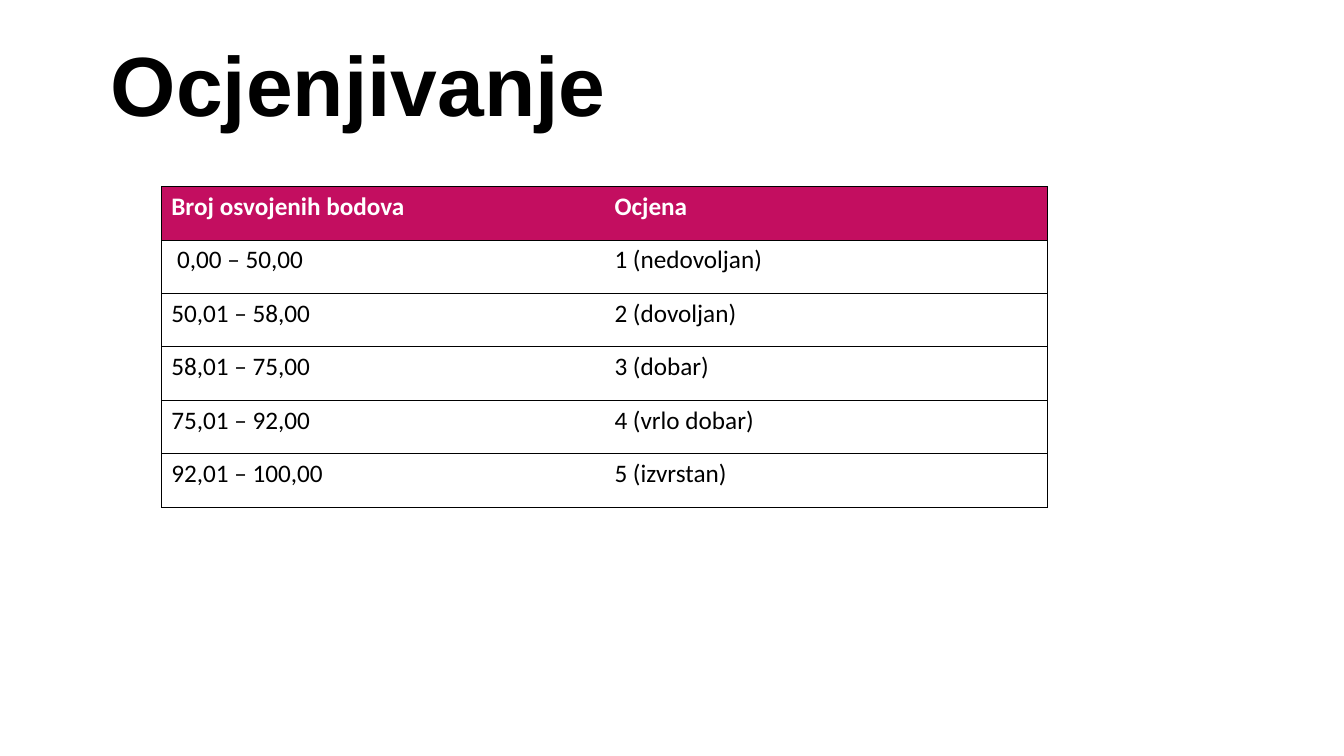
from lxml import etree
from pptx import Presentation
from pptx.dml.color import RGBColor
from pptx.enum.text import MSO_ANCHOR, PP_ALIGN
from pptx.oxml.ns import qn
from pptx.util import Inches, Pt

COLORS = {"text": "000000", "header": "C30E60", "header_text": "FFFFFF", "border": "000000"}
GRADES = [
    ("Broj osvojenih bodova", "Ocjena"),
    (" 0,00 – 50,00", "1 (nedovoljan)"),
    ("50,01 – 58,00", "2 (dovoljan)"),
    ("58,01 – 75,00", "3 (dobar)"),
    ("75,01 – 92,00", "4 (vrlo dobar)"),
    ("92,01 – 100,00", "5 (izvrstan)"),
]


def rgb(name):
    return RGBColor.from_string(COLORS[name])


def format_font(font, name, size, color, bold):
    font.name, font.size, font.bold = name, Pt(size), bold
    font.color.rgb = rgb(color)


def set_borders(cell, visible):
    """Draw the sides named in visible and hide the others."""
    tc_pr = cell._tc.get_or_add_tcPr()
    for i, side in enumerate("LRTB"):
        ln = etree.Element(qn(f"a:ln{side}"), w=str(Pt(0.5)))
        if side in visible:
            fill = etree.SubElement(ln, qn("a:solidFill"))
            etree.SubElement(fill, qn("a:srgbClr"), val=COLORS["border"])
        else:
            etree.SubElement(ln, qn("a:noFill"))
        tc_pr.insert(i, ln)


def add_title(slide, text, left, top, width, height):
    title = slide.shapes.title
    title.left, title.top = Inches(left), Inches(top)
    title.width, title.height = Inches(width), Inches(height)
    tf = title.text_frame
    tf.text = text
    tf.word_wrap = True
    tf.vertical_anchor = MSO_ANCHOR.BOTTOM
    p = tf.paragraphs[0]
    p.alignment = PP_ALIGN.LEFT
    p.line_spacing = 0.9
    format_font(p.runs[0].font, "Arial", 60, "text", True)


def add_grade_table(slide, rows, left, top, width, height):
    n_cols = len(rows[0])
    table = slide.shapes.add_table(
        len(rows), n_cols, Inches(left), Inches(top), Inches(width), Inches(height)
    ).table
    table.horz_banding = False
    for r, texts in enumerate(rows):
        for c, text in enumerate(texts):
            cell = table.cell(r, c)
            header = r == 0
            # Fill
            if header:
                cell.fill.solid()
                cell.fill.fore_color.rgb = rgb("header")
            else:
                cell.fill.background()
            # Outer frame and row rules, no line between columns
            set_borders(cell, "TB" + "L" * (c == 0) + "R" * (c == n_cols - 1))
            # Text
            cell.text_frame.text = text
            run = cell.text_frame.paragraphs[0].runs[0]
            format_font(run.font, "Calibri", 18, "header_text" if header else "text", header)


def main():
    prs = Presentation()
    prs.slide_width, prs.slide_height = Inches(13.33), Inches(7.5)
    slide = prs.slides.add_slide(prs.slide_layouts.get_by_name("Title Only"))
    add_title(slide, "Ocjenjivanje", 1, 0.23, 10, 1.16)
    add_grade_table(slide, GRADES, 1.6, 1.85, 8.79, 3.18)
    prs.save("out.pptx")


if __name__ == "__main__":
    main()
